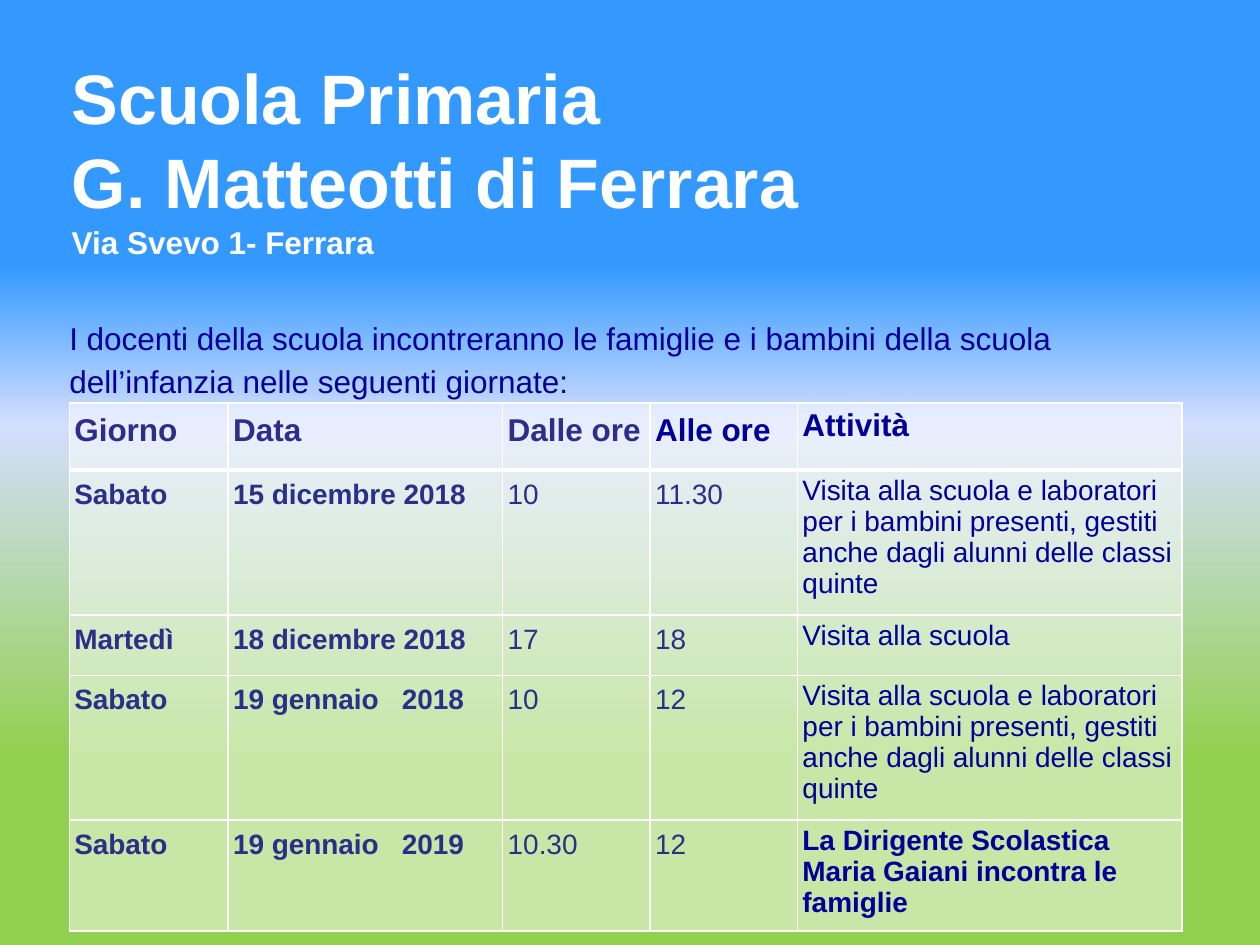
"""Build the open-day slide of a primary school."""
from dataclasses import dataclass

from pptx import Presentation
from pptx.dml.color import RGBColor
from pptx.enum.text import MSO_ANCHOR
from pptx.oxml import parse_xml
from pptx.oxml.ns import nsdecls, qn
from pptx.util import Inches, Pt

MIDDLE = MSO_ANCHOR.MIDDLE
BLANK = 6


@dataclass(frozen=True)
class Theme:
    font: str = "Arial"
    white: str = "FFFFFF"
    ink: str = "2D2D8A"
    navy: str = "000099"
    title: int = 40
    body: int = 18
    small: int = 16
    sky: tuple = ((0, "3399FF"), (28, "3399FF"), (45, "D4DEFF"),
                  (53, "C4DBD5"), (80, "92D050"), (100, "92D050"))


class Page:
    def __init__(self, slide, theme):
        self.slide = slide
        self.theme = theme

    def style(self, run, size, color, bold=False):
        font = run.font
        font.name = self.theme.font
        font.size = Pt(size)
        font.bold = bold
        font.color.rgb = RGBColor.from_string(color)

    def backdrop(self):
        fill = self.slide.background.fill
        fill.gradient()
        fill.gradient_angle = 270
        stops = next(self.slide.element.iter(qn("a:gsLst")))
        for stop in list(stops):
            stops.remove(stop)
        for place, color in self.theme.sky:
            stops.append(parse_xml(
                f'<a:gs {nsdecls("a")} pos="{place * 1000}">'
                f'<a:srgbClr val="{color}"/></a:gs>'))

    def text(self, box, words, sizes, color, bold=False, inset=(0.1, 0.05), space=1):
        shape = self.slide.shapes.add_textbox(*map(Inches, box))
        frame = shape.text_frame
        frame.word_wrap = True
        frame.vertical_anchor = MIDDLE
        frame.margin_left = frame.margin_right = Inches(inset[0])
        frame.margin_top = frame.margin_bottom = Inches(inset[1])
        frame.text = words
        line = frame.paragraphs[0]
        line.line_spacing = space
        for run, size in zip(line.runs, sizes):
            self.style(run, size, color, bold)

    def cell(self, cell, words, size, color, bold, loose):
        cell.margin_left = cell.margin_right = Inches(0.04)
        cell.margin_top = cell.margin_bottom = Inches(0.04)
        cell.text_frame.text = words
        line = cell.text_frame.paragraphs[0]
        if loose:
            line.line_spacing = 1.13
            line.space_after = Pt(9)
        self.style(line.runs[0], size, color, bold)
        cell.fill.solid()
        cell.fill.fore_color.rgb = RGBColor.from_string(self.theme.white)

    def border(self, cell, side, width):
        return parse_xml(
            f'<a:ln{side} {nsdecls("a")} w="{Pt(width)}"><a:solidFill>'
            f'<a:srgbClr val="{self.theme.white}"/></a:solidFill></a:ln{side}>')

    def table(self, box, widths, heights, rows):
        theme = self.theme
        frame = self.slide.shapes.add_table(
            len(rows), len(widths), *map(Inches, box))
        grid = frame.table
        grid.first_row = grid.horz_banding = False
        for col, width in zip(grid.columns, widths):
            col.width = Inches(width)
        for row, height in zip(grid.rows, heights):
            row.height = Inches(height)
        last = len(widths) - 1
        for r, row in enumerate(rows):
            head = r == 0
            for c, words in enumerate(row):
                navy = c == last or (head and c == last - 1)
                bold = head or c < 2 or (c == last and r == len(rows) - 1)
                self.cell(grid.cell(r, c), words,
                          theme.body if head else theme.small,
                          theme.navy if navy else theme.ink, bold, c < last)
        self.frost(frame)
        self.tabs(frame)

    def frost(self, frame):
        for r, row in enumerate(frame.element.iter(qn("a:tr"))):
            for props in row.iter(qn("a:tcPr")):
                tint = next(props.iter(qn("a:srgbClr")))
                tint.append(parse_xml(f'<a:alpha {nsdecls("a")} val="50000"/>'))
                widths = {"L": 1, "R": 1, "T": 3 if r == 1 else 1,
                          "B": 3 if r == 0 else 1}
                for spot, (side, width) in enumerate(widths.items()):
                    props.insert(spot, self.border(props, side, width))

    def tabs(self, frame):
        for line in frame.element.iter(qn("a:p")):
            if "\t" in "".join(line.itertext()):
                line.find(qn("a:pPr")).append(parse_xml(
                    f'<a:tabLst {nsdecls("a")}>'
                    f'<a:tab pos="{Inches(1.34)}" algn="l"/></a:tabLst>'))


def main():
    theme = Theme()
    deck = Presentation()
    deck.slide_width, deck.slide_height = Inches(10), Inches(7.5)
    page = Page(deck.slides.add_slide(deck.slide_layouts[BLANK]), theme)
    page.backdrop()
    page.text((0.47, 0.47, 8.92, 1.56),
              "Scuola Primaria\vG. Matteotti di Ferrara\vVia Svevo 1- Ferrara",
              (theme.title, theme.title, theme.body), theme.white, bold=True)
    visit = "Visita alla scuola"
    labs = (f"{visit} e laboratori per i bambini presenti, "
            "gestiti anche dagli alunni delle classi quinte")
    page.table(
        (0.55, 3.2, 8.83, 4.19),
        (1.26, 2.18, 1.17, 1.17, 3.05),
        (0.53, 1.15, 0.48, 1.15, 0.88),
        (("Giorno", "Data", "Dalle ore", "Alle ore", "Attività"),
         ("Sabato", "15 dicembre 2018", "10", "11.30", labs),
         ("Martedì", "18 dicembre 2018", "17", "18", visit),
         ("Sabato", "19 gennaio\t2018", "10", "12", labs),
         ("Sabato", "19 gennaio\t2019", "10.30", "12",
          "La Dirigente Scolastica Maria Gaiani incontra le famiglie")))
    page.text((0.55, 2.5, 8.83, 0.66),
              "I docenti della scuola incontreranno le famiglie e i bambini "
              "della scuola dell’infanzia nelle seguenti giornate:",
              (theme.body,), theme.navy, inset=(0, 0), space=1.14)
    deck.save("out.pptx")


if __name__ == "__main__":
    main()
